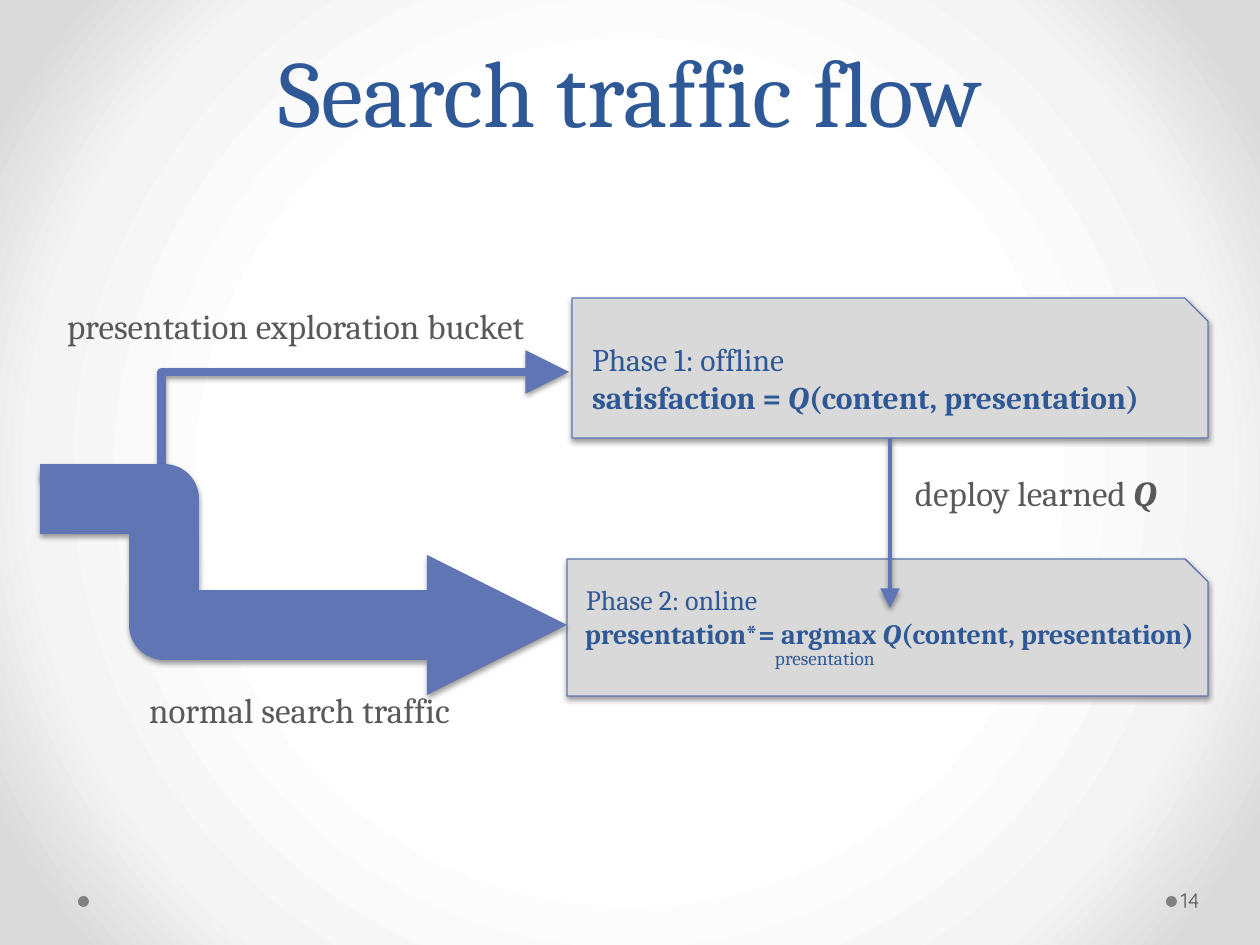
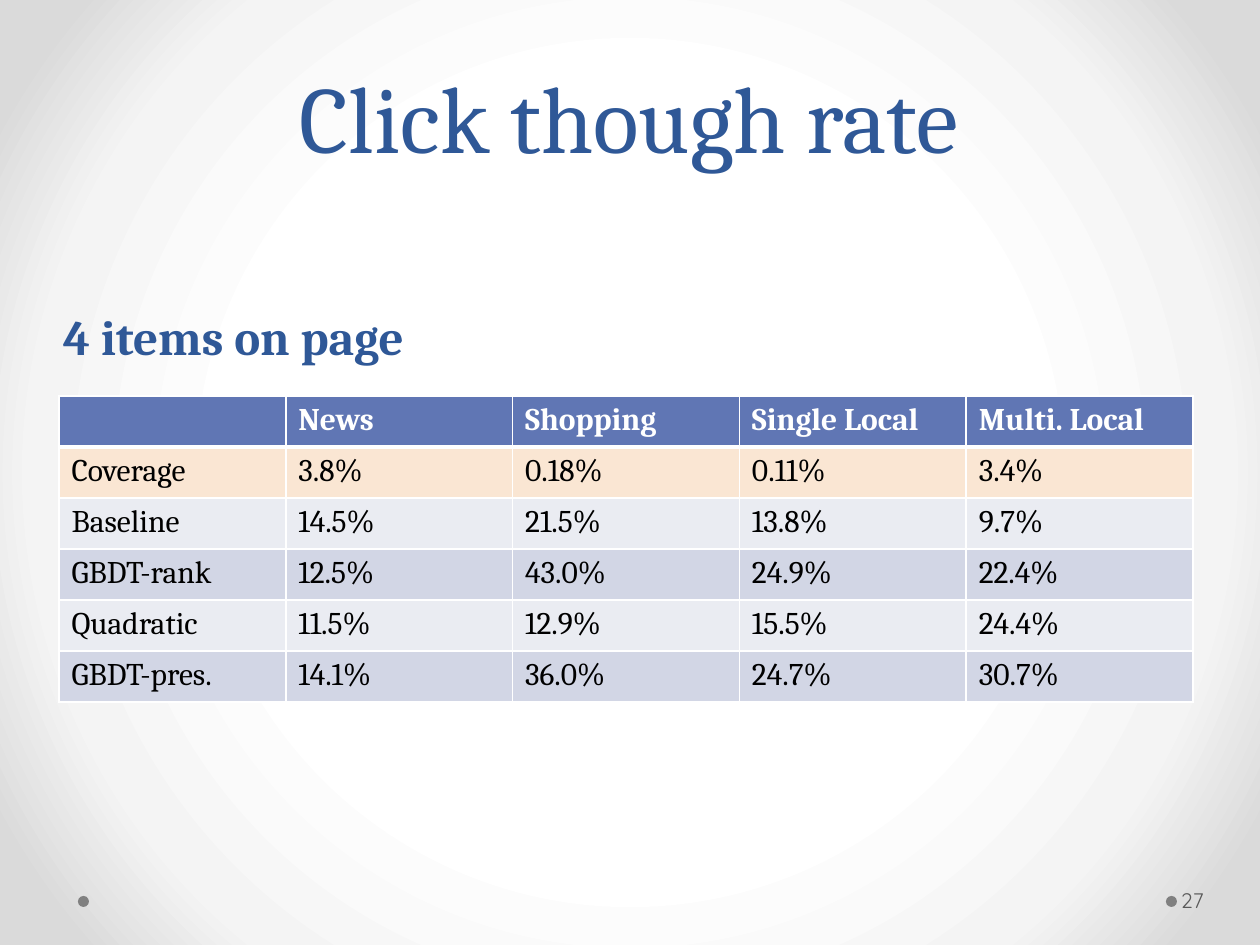
from lxml import etree
from pptx import Presentation
from pptx.dml.color import RGBColor
from pptx.enum.shapes import MSO_CONNECTOR, MSO_SHAPE
from pptx.enum.text import MSO_ANCHOR, PP_ALIGN
from pptx.oxml import parse_xml
from pptx.oxml.ns import qn
from pptx.util import Emu, Pt

EMU_PER_PX = 914400 / 126
A_NS = 'xmlns:a="http://schemas.openxmlformats.org/drawingml/2006/main"'

ELLIPSE, SNIPPED = MSO_SHAPE.OVAL, MSO_SHAPE.SNIP_1_RECTANGLE
STRAIGHT, ELBOW = MSO_CONNECTOR.STRAIGHT, MSO_CONNECTOR.ELBOW
TOP, MIDDLE, BOTTOM = MSO_ANCHOR.TOP, MSO_ANCHOR.MIDDLE, MSO_ANCHOR.BOTTOM
LEFT, CENTER = PP_ALIGN.LEFT, PP_ALIGN.CENTER

SERIF, SANS = "Cambria", "Quicksand"
NAVY, BLUE, GREY, DOT_GREY = "2F5897", "6076B4", "595959", "808080"
PANEL, WHITE, BLACK = "D9D9D9", "FFFFFF", "000000"
PEACH, PALE, MID = "FAE6D3", "EAECF2", "D2D6E5"
BACKGROUND_STOPS = [(50, "FFFFFF"), (76, "F4F4F4"), (92, "DADADA")]

RATES = [
    ("", "News", "Shopping", "Single Local", "Multi. Local"),
    ("Coverage", "3.8%", "0.18%", "0.11%", "3.4%"),
    ("Baseline", "14.5%", "21.5%", "13.8%", "9.7%"),
    ("GBDT-rank", "12.5%", "43.0%", "24.9%", "22.4%"),
    ("Quadratic", "11.5%", "12.9%", "15.5%", "24.4%"),
    ("GBDT-pres.", "14.1%", "36.0%", "24.7%", "30.7%"),
]
ROW_FILLS = [BLUE, PEACH, PALE, MID, PALE, MID]


def px(n):
    return Emu(round(n * EMU_PER_PX))


def rgb(color):
    return RGBColor.from_string(color)


# Text
def add_run(p, text, size, color, font=SERIF, style=""):
    r = p.add_run()
    r.text = text
    r.font.name = font
    r.font.size = Pt(size)
    r.font.color.rgb = rgb(color)
    r.font.bold = "b" in style
    r.font.italic = "i" in style


def add_text(slide, box, lines, size, color, font=SERIF, anchor=TOP,
             align=LEFT, spacing=None, left_inset=13):
    """Each line is a list of (text, style) runs; style may hold b and i."""
    tf = slide.shapes.add_textbox(*map(px, box)).text_frame
    tf.word_wrap = True
    tf.vertical_anchor = anchor
    tf.margin_left = px(left_inset)
    for i, runs in enumerate(lines):
        p = tf.paragraphs[0] if i == 0 else tf.add_paragraph()
        p.alignment = align
        p.line_spacing = spacing
        for text, style in runs:
            add_run(p, text, size, color, font, style)


# Shapes and lines
def add_shadow(shape):
    sp_pr = shape._element.spPr
    for old in sp_pr.findall(qn("a:effectLst")):
        sp_pr.remove(old)
    sp_pr.append(parse_xml(
        f'<a:effectLst {A_NS}><a:outerShdw blurRad="{Pt(3.1)}" dist="{Pt(1.6)}" '
        'dir="5400000" rotWithShape="0"><a:srgbClr val="000000">'
        '<a:alpha val="38000"/></a:srgbClr></a:outerShdw></a:effectLst>'))


def add_filled(slide, kind, box, fill):
    sp = slide.shapes.add_shape(kind, *map(px, box))
    sp.shadow.inherit = False
    sp.fill.solid()
    sp.fill.fore_color.rgb = rgb(fill)
    sp.line.fill.background()
    return sp


def add_panel(slide, box):
    sp = add_filled(slide, SNIPPED, box, PANEL)
    sp.line.color.rgb = rgb(BLUE)
    sp.line.width = Pt(0.75)
    add_shadow(sp)
    return sp


def add_arrow(slide, start, end, width, head="lg", bend=None, source=None):
    """Bend is the percentage of the run at which an elbow turns."""
    kind = STRAIGHT if bend is None else ELBOW
    line = slide.shapes.add_connector(kind, *map(px, start + end))
    if source is not None:
        line.begin_connect(source, 2)
        line.end_x = line.begin_x
    line.line.color.rgb = rgb(BLUE)
    line.line.width = Pt(width)
    ln = line._element.spPr.find(qn("a:ln"))
    etree.SubElement(ln, qn("a:round"))
    etree.SubElement(ln, qn("a:tailEnd"), type="triangle", w=head, len=head)
    if bend is not None:
        geom = line._element.spPr.find(qn("a:prstGeom"))
        guides = geom.find(qn("a:avLst"))
        if guides is None:
            guides = etree.SubElement(geom, qn("a:avLst"))
        etree.SubElement(guides, qn("a:gd"), name="adj1",
                         fmla=f"val {round(bend * 1000)}")
    add_shadow(line)


# Table
def set_borders(cell, top, bottom):
    widths = {"L": 1, "R": 1, "T": top, "B": bottom}
    tc_pr = cell._tc.get_or_add_tcPr()
    for i, (side, width) in enumerate(widths.items()):
        tc_pr.insert(i, parse_xml(
            f'<a:ln{side} {A_NS} w="{Pt(width)}"><a:solidFill>'
            f'<a:srgbClr val="{WHITE}"/></a:solidFill></a:ln{side}>'))


def add_rate_table(slide, box):
    table = slide.shapes.add_table(len(RATES), len(RATES[0]), *map(px, box)).table
    for i, (row, fill) in enumerate(zip(RATES, ROW_FILLS)):
        color, style = (WHITE, "b") if i == 0 else (BLACK, "")
        for j, text in enumerate(row):
            cell = table.cell(i, j)
            cell.fill.solid()
            cell.fill.fore_color.rgb = rgb(fill)
            set_borders(cell, 3 if i == 1 else 1, 3 if i == 0 else 1)
            if text:
                add_run(cell.text_frame.paragraphs[0], text, 18, color, style=style)


# Shared slide parts
def set_background(master):
    master.background.fill.gradient()
    grad = master.element.find(".//" + qn("p:bgPr")).find(qn("a:gradFill"))
    stops = "".join(f'<a:gs pos="{pos * 1000}"><a:srgbClr val="{color}"/></a:gs>'
                    for pos, color in BACKGROUND_STOPS)
    grad.getparent().replace(grad, parse_xml(
        f'<a:gradFill {A_NS} rotWithShape="1"><a:gsLst>{stops}</a:gsLst>'
        '<a:path path="circle"><a:fillToRect l="50000" t="50000" r="50000" '
        'b="50000"/></a:path></a:gradFill>'))


def add_base_slide(prs, title, title_box, number):
    slide = prs.slides.add_slide(prs.slide_layouts[6])
    for left in (1166, 78):
        add_filled(slide, ELLIPSE, (left, 896, 11, 11), DOT_GREY)
    add_text(slide, title_box, [[(title, "")]], 54, NAVY, anchor=BOTTOM,
             align=CENTER, spacing=Pt(58))
    add_text(slide, (1177, 875, 77, 50), [[(number, "")]], 12, GREY, SANS,
             anchor=MIDDLE, left_inset=4)
    return slide


def build_traffic_flow(prs):
    slide = add_base_slide(prs, "Search traffic flow", (63, 28, 1134, 125), "14")
    add_arrow(slide, (40, 476), (569, 372), 5, bend=23)

    # Offline phase
    offline = add_panel(slide, (572, 298, 636, 140))
    add_text(slide, (579, 334, 596, 89), [
        [("Phase 1: offline", "")],
        [("satisfaction = ", "b"), ("Q", "bi"), ("(content, presentation)", "b")],
    ], 18, NAVY)

    # Online phase
    add_panel(slide, (567, 559, 641, 137))
    add_text(slide, (572, 610, 640, 54), [
        [("presentation*= argmax ", "b"), ("Q", "bi"),
         ("(content, presentation)", "b")]], 16, NAVY)
    add_text(slide, (762, 640, 134, 37), [[("presentation", "")]], 11, NAVY)
    add_text(slide, (573, 576, 213, 54), [[("Phase 2: online", "")]], 16, NAVY)

    # Main traffic and labels
    add_arrow(slide, (40, 499), (567, 625), 40, head="sm", bend=23.6)
    add_text(slide, (136, 682, 348, 55), [[("normal search traffic", "")]], 20, GREY)
    add_text(slide, (54, 298, 524, 55),
             [[("presentation exploration bucket", "")]], 20, GREY)
    add_text(slide, (902, 465, 306, 55),
             [[("deploy learned ", ""), ("Q", "bi")]], 20, GREY)
    add_arrow(slide, (890, 438), (890, 608), 2.25, source=offline)


def build_click_rate(prs):
    slide = add_base_slide(prs, "Click though rate", (223, 46, 811, 133), "27")
    add_rate_table(slide, (59, 396, 1134, 306))
    add_text(slide, (63, 300, 383, 72), [[("4 items on page", "b")]], 28, NAVY,
             left_inset=0)


def main():
    prs = Presentation()
    prs.slide_width, prs.slide_height = px(1260), px(945)
    set_background(prs.slide_master)
    build_traffic_flow(prs)
    build_click_rate(prs)
    prs.save("out.pptx")


if __name__ == "__main__":
    main()
